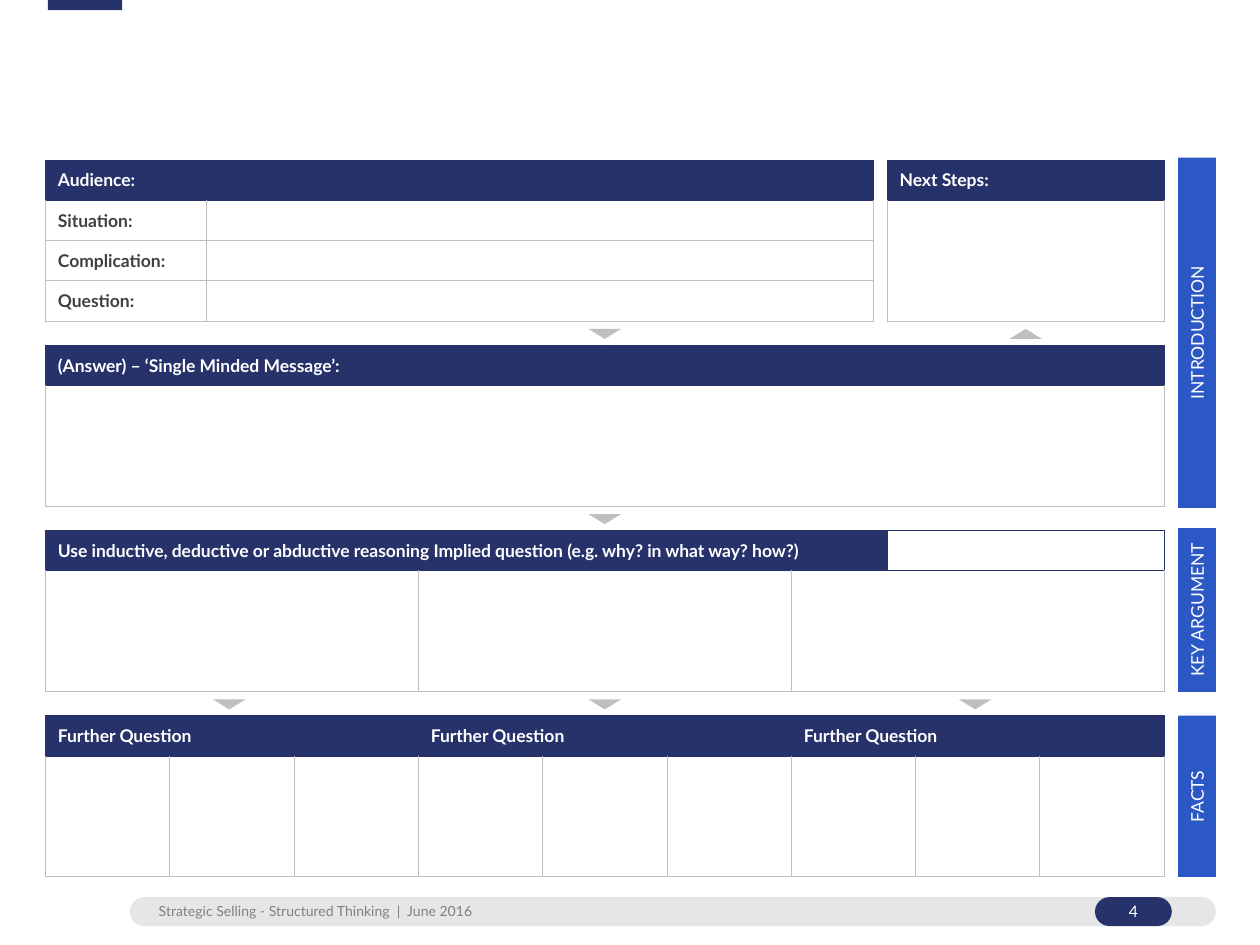
from lxml.etree import SubElement
from pptx import Presentation
from pptx.dml.color import RGBColor
from pptx.enum.shapes import MSO_SHAPE
from pptx.enum.text import MSO_ANCHOR, PP_ALIGN
from pptx.oxml.ns import qn
from pptx.util import Inches, Pt

NAVY, BLUE, GREY, WHITE = "27326A", "2C58C5", "BFBFBF", "FFFFFF"
LEFT, FULL_WIDTH, ROW, BODY = 0.36, 8.88, 0.32, 0.96
BLOCK_TOPS = [1.27, 2.74, 4.21, 5.68]


def color(value):
    """Turn a hex string into a colour."""
    return RGBColor.from_string(value)


def write(text_frame, text, size, hex_color, bold=False, align=None):
    """Set one line of formatted text."""
    text_frame.text = text
    paragraph = text_frame.paragraphs[0]
    paragraph.alignment = align
    for run in paragraph.runs:
        run.font.name = "Lato"
        run.font.size = Pt(size)
        run.font.bold = bold
        run.font.color.rgb = color(hex_color)


def clear_margins(text_frame):
    """Remove the inner margins of a text frame."""
    text_frame.margin_left = text_frame.margin_right = 0
    text_frame.margin_top = text_frame.margin_bottom = 0


def add_shape(slide, kind, left, top, width, height, fill):
    """Add a flat shape without outline."""
    shape = slide.shapes.add_shape(
        kind, Inches(left), Inches(top), Inches(width), Inches(height))
    shape.shadow.inherit = False
    shape.fill.solid()
    shape.fill.fore_color.rgb = color(fill)
    shape.line.fill.background()
    return shape


def add_pill(slide, left, width, fill):
    """Add a fully rounded footer bar."""
    pill = add_shape(slide, MSO_SHAPE.ROUNDED_RECTANGLE, left, 7.12, width, 0.23, fill)
    pill.adjustments[0] = 0.5
    return pill


def add_footer(slide):
    """Add the footer bar with its text and page number."""
    add_pill(slide, 1.03, 8.62, "E7E6E6")
    number = add_pill(slide, 8.69, 0.61, NAVY)
    number.text_frame.vertical_anchor = MSO_ANCHOR.MIDDLE
    write(number.text_frame, "4", 9, WHITE, align=PP_ALIGN.CENTER)
    box = slide.shapes.add_textbox(Inches(1.26), Inches(7.16), Inches(3.58), Inches(0.13))
    box.text_frame.word_wrap = True
    clear_margins(box.text_frame)
    write(box.text_frame, "Strategic Selling - Structured Thinking  |  June 2016", 8, "808080")


def add_side_label(slide, text, top, length):
    """Add a label bar that reads upwards beside the tables."""
    label = add_shape(slide, MSO_SHAPE.RECTANGLE, 9.5 - length / 2,
                      top + length / 2 - 0.15, length, 0.3, BLUE)
    label.rotation = 270
    label.text_frame.vertical_anchor = MSO_ANCHOR.MIDDLE
    clear_margins(label.text_frame)
    write(label.text_frame, text, 10, WHITE, align=PP_ALIGN.CENTER)


def add_arrow(slide, center, top, rotation=0):
    """Add a small triangle between two blocks."""
    arrow = add_shape(slide, MSO_SHAPE.FLOWCHART_MERGE, center - 0.13, top, 0.26, 0.08, GREY)
    arrow.rotation = rotation


def set_borders(cell, side_color, top_color):
    """Draw the four thin borders of a cell."""
    properties = cell._tc.get_or_add_tcPr()
    for side in "LRTB":
        line = SubElement(properties, qn(f"a:ln{side}"), w=str(Pt(0.5)))
        fill = SubElement(line, qn("a:solidFill"))
        SubElement(fill, qn("a:srgbClr"), val=top_color if side == "T" else side_color)


def format_cell(cell, text, row, fill):
    """Style one header or body cell."""
    set_borders(cell, GREY if row else NAVY, GREY if row > 1 else NAVY)
    cell.fill.solid()
    cell.fill.fore_color.rgb = color(fill)
    cell.vertical_anchor = MSO_ANCHOR.MIDDLE
    if text:
        write(cell.text_frame, text, 10, "404040" if row else WHITE, bold=True)
    else:
        SubElement(cell.text_frame.paragraphs[0]._p, qn("a:endParaRPr"), sz="1000")


def add_block(slide, left, top, widths, heights, texts, spans=(), white_headers=()):
    """Add a table; texts maps (row, column), spans lists (row, first, last)."""
    table = slide.shapes.add_table(
        len(heights), len(widths), Inches(left), Inches(top),
        Inches(sum(widths)), Inches(sum(heights))).table
    table.first_row = table.horz_banding = False
    for column, width in zip(table.columns, widths):
        column.width = Inches(width)
    for row, height in zip(table.rows, heights):
        row.height = Inches(height)
    for row in range(len(heights)):
        for column in range(len(widths)):
            fill = WHITE if row or column in white_headers else NAVY
            format_cell(table.cell(row, column), texts.get((row, column)), row, fill)
    for row, first, last in spans:
        table.cell(row, first).merge(table.cell(row, last))


def add_blocks(slide):
    """Add the five tables of the storyline template."""
    intro, answer, argument, facts = BLOCK_TOPS
    two_rows = [ROW, BODY]
    add_block(slide, LEFT, intro, [1.28, 5.29], [ROW] * 4,
              {(0, 0): "Audience:", (1, 0): "Situation:",
               (2, 0): "Complication:", (3, 0): "Question:"}, [(0, 0, 1)])
    add_block(slide, 7.04, intro, [2.2], two_rows, {(0, 0): "Next Steps:"})
    add_block(slide, LEFT, answer, [FULL_WIDTH / 2] * 2, two_rows,
              {(0, 0): "(Answer) – ‘Single Minded Message’:"}, [(1, 0, 1)])
    add_block(slide, LEFT, argument, [2.96, 2.96, 0.76, 2.2], two_rows,
              {(0, 0): "Use inductive, deductive or abductive reasoning "
                       "Implied question (e.g. why? in what way? how?)"},
              [(0, 0, 2), (1, 2, 3)], white_headers=[3])
    groups = range(0, 9, 3)
    add_block(slide, LEFT, facts, [FULL_WIDTH / 9] * 9, two_rows,
              {(0, first): "Further Question" for first in groups},
              [(0, first, first + 2) for first in groups])


def main():
    """Build the slide and save it."""
    presentation = Presentation()
    presentation.slide_width, presentation.slide_height = Inches(10), Inches(7.5)
    slide = presentation.slides.add_slide(presentation.slide_layouts[6])
    add_footer(slide)
    add_shape(slide, MSO_SHAPE.RECTANGLE, 0.38, 0, 0.59, 0.08, NAVY)
    add_blocks(slide)
    for text, top, length in [("INTRODUCTION", 1.25, 2.78),
                              ("KEY ARGUMENT", 4.19, 1.3), ("FACTS", 5.68, 1.28)]:
        add_side_label(slide, text, top, length)
    for top in (2.61, 4.08, 5.55):
        add_arrow(slide, 4.8, top)
    add_arrow(slide, 8.14, 2.61, rotation=180)
    for center in (1.82, 7.74):
        add_arrow(slide, center, 5.55)
    presentation.save("out.pptx")


if __name__ == "__main__":
    main()
